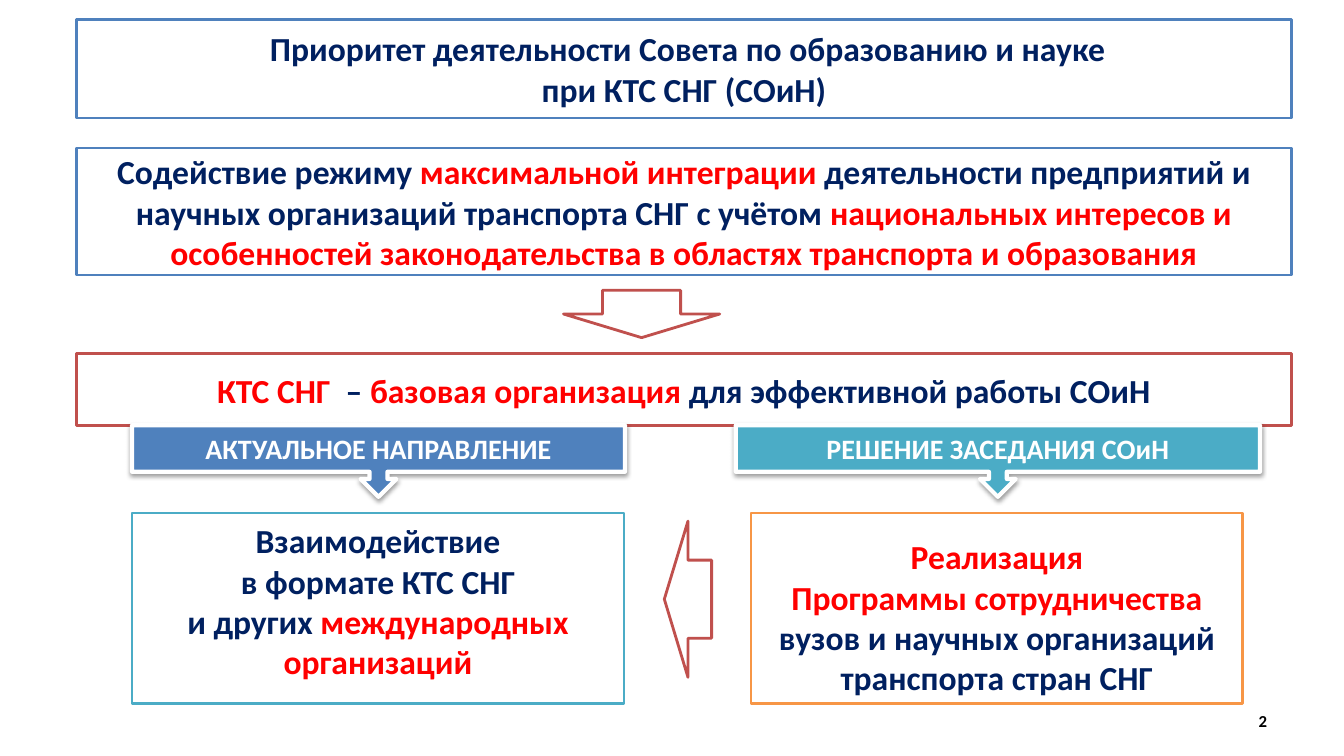
from lxml.etree import SubElement
from pptx import Presentation
from pptx.dml.color import RGBColor
from pptx.enum.shapes import MSO_SHAPE
from pptx.enum.text import MSO_ANCHOR, PP_ALIGN
from pptx.oxml.ns import qn
from pptx.util import Pt

WHITE, NAVY, RED = "FFFFFF", "002060", "FF0000"
BLUE, TEAL, BRICK, ORANGE = "4F81BD", "4BACC6", "C0504D", "F79646"
BANNER_LEFT, BANNER_WIDTH = 54.7, 867.6
CALLOUT_TOP, CALLOUT_HEIGHT = 303.8, 51.1
GOAL_TOP, GOAL_WIDTH, GOAL_HEIGHT = 366.5, 351.4, 136.1


def color(value):
    return RGBColor.from_string(value)


def add_outlined(page, kind, frame, line, fill=WHITE, weight=2):
    shape = page.shapes.add_shape(kind, *[Pt(length) for length in frame])
    shape.shadow.inherit = False
    shape.fill.solid()
    shape.fill.fore_color.rgb = color(fill)
    shape.line.color.rgb = color(line)
    shape.line.width = Pt(weight)
    return shape


def write(shape, paragraphs, size=24, align=PP_ALIGN.CENTER, top=3.6, bottom=3.6):
    frame = shape.text_frame
    frame.word_wrap = True
    frame.vertical_anchor = MSO_ANCHOR.MIDDLE
    frame.margin_top, frame.margin_bottom = Pt(top), Pt(bottom)
    for index, spans in enumerate(paragraphs):
        para = frame.add_paragraph() if index else frame.paragraphs[0]
        para.alignment = align
        for text, tint in spans:
            span = para.add_run()
            span.text = text
            span.font.name = "Calibri"
            span.font.size = Pt(size)
            span.font.bold = True
            span.font.color.rgb = color(tint)


def add_banner(page, top, height, line, paragraphs):
    frame = (BANNER_LEFT, top, BANNER_WIDTH, height)
    write(add_outlined(page, MSO_SHAPE.RECTANGLE, frame, line), paragraphs)


def add_shadow(shape):
    effects = shape._element.spPr.find(qn("a:effectLst"))
    shadow = SubElement(effects, qn("a:outerShdw"), blurRad=str(Pt(3.1)),
                        dist=str(Pt(1.6)), dir="5400000", rotWithShape="0")
    tint = SubElement(shadow, qn("a:srgbClr"), val="000000")
    SubElement(tint, qn("a:alpha"), val="38000")


def add_callout(page, left, width, fill, text):
    frame = (left, CALLOUT_TOP, width, CALLOUT_HEIGHT)
    callout = add_outlined(page, MSO_SHAPE.DOWN_ARROW_CALLOUT, frame, WHITE, fill, 3)
    add_shadow(callout)
    write(callout, [[(text, WHITE)]], size=20)


def add_goal(page, left, line, paragraphs, **margins):
    frame = (left, GOAL_TOP, GOAL_WIDTH, GOAL_HEIGHT)
    write(add_outlined(page, MSO_SHAPE.RECTANGLE, frame, line), paragraphs, **margins)


def add_arrow(page, left, top, rotation=0):
    arrow = add_outlined(page, MSO_SHAPE.DOWN_ARROW, (left, top, 111.6, 33.8), BRICK)
    arrow.rotation = rotation


def add_page_number(page, number):
    box = page.shapes.add_textbox(Pt(688.3), Pt(500.4), Pt(223.9), Pt(28.8))
    write(box, [[(number, "000000")]], size=12, align=PP_ALIGN.RIGHT)


def main():
    deck = Presentation()
    deck.slide_width, deck.slide_height = Pt(960), Pt(540)
    page = deck.slides.add_slide(deck.slide_layouts[6])

    add_banner(page, 13.7, 70.6, BLUE, [
        [(" Приоритет деятельности Совета по образованию и науке", NAVY)],
        [("при КТС СНГ (СОиН)", NAVY)],
    ])
    add_banner(page, 105.8, 90.7, BLUE, [[
        ("Содействие режиму ", NAVY),
        ("максимальной интеграции ", RED),
        ("деятельности предприятий и научных организаций транспорта СНГ с учётом ", NAVY),
        ("национальных интересов и особенностей законодательства "
         "в областях транспорта и образования", RED),
    ]])
    add_arrow(page, 402.5, 207.4)
    add_banner(page, 252.7, 51.1, BRICK, [[
        ("КТС СНГ  ", RED),
        ("– ", NAVY),
        ("базовая организация ", RED),
        ("для эффективной работы СОиН", NAVY),
    ]])

    add_callout(page, 94.3, 352.1, BLUE, "АКТУАЛЬНОЕ НАПРАВЛЕНИЕ")
    add_callout(page, 525.6, 374.4, TEAL, "РЕШЕНИЕ ЗАСЕДАНИЯ СОиН")
    add_goal(page, 94.3, TEAL, [
        [("Взаимодействие", NAVY)],
        [("в формате КТС СНГ", NAVY)],
        [("и других ", NAVY), ("международных", RED)],
        [("организаций", RED)],
    ], bottom=14.4)
    add_arrow(page, 435.6, 411.1, rotation=90)
    add_goal(page, 536.4, ORANGE, [
        [("Реализация", RED)],
        [("Программы сотрудничества ", RED),
         ("вузов и научных организаций транспорта стран СНГ", NAVY)],
    ], top=15.6)
    add_page_number(page, "2")

    deck.save("out.pptx")


if __name__ == "__main__":
    main()
